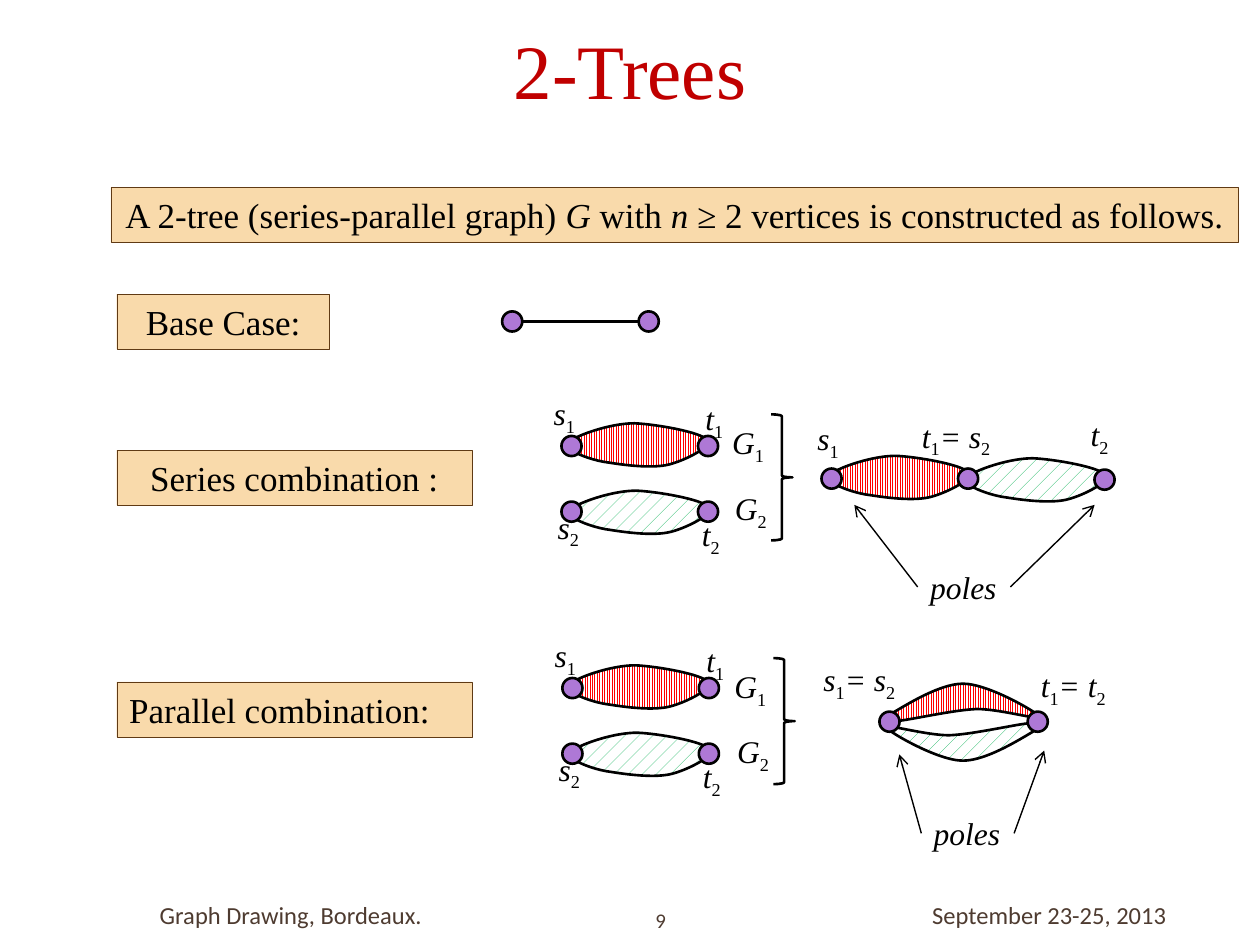
from dataclasses import dataclass
from itertools import groupby

from lxml.etree import SubElement
from pptx import Presentation
from pptx.dml.color import RGBColor
from pptx.enum.dml import MSO_PATTERN as Pattern
from pptx.enum.shapes import MSO_CONNECTOR as Connector, MSO_SHAPE as Shape
from pptx.enum.text import MSO_ANCHOR as Anchor, MSO_AUTO_SIZE as AutoSize, PP_ALIGN as Align
from pptx.oxml.ns import qn
from pptx.util import Pt


@dataclass(frozen=True)
class Theme:
    serif: str = "Times New Roman"
    sans: str = "Calibri"
    title: str = "C00000"
    ink: str = "000000"
    paper: str = "FFFFFF"
    footer: str = "4E3B30"
    box: str = "F9DAAB"
    box_line: str = "603A14"
    node: str = "AE78D6"
    red: str = "FF0000"
    green: str = "00B050"
    title_size: float = 44
    box_size: float = 20
    label_size: float = 18
    footer_size: float = 14
    number_size: float = 11.9
    stroke: float = 1.5
    thin: float = 0.79


THEME = Theme()
RED = (Pattern.LIGHT_VERTICAL, THEME.red)
GREEN = (Pattern.PERCENT_10, THEME.green)
NODE = 11.5
LABEL_HEIGHT = 28.8
SPAN = 78  # distance between the poles of one component
ROW = 37.5  # distance between the two components of a pair

# Outlines: opposite corners, then a start point and cubic segments
LENS = ((-1.5, -13), (77.8, 11.5)), [
    (3, -5), (9, -8), (24, -13), (36, -13), (48, -12.5), (74, -8), (77.5, -3.5),
    (81, 0), (65.5, 8), (56, 10.5), (46.5, 13), (31, 11), (21.5, 9.5),
    (13, 8.5), (4, 5), (1, 3), (-3, 1), (-3, -3), (3, -5)]
CRESCENT = ((-46.8, -22), (44, -0.4)), [
    (-42.5, -4), (-36, -7.5), (-14.5, -22), (0, -22), (14.5, -22), (42.5, -5.5),
    (44, -3), (45.5, -0.5), (21.5, -7.5), (8, -7.5), (-6, -7), (-31, -1),
    (-39, -0.5), (-47.5, 0.5), (-49, -0.5), (-42.5, -4)]


def color(value):
    return RGBColor.from_string(value)


def points(*lengths):
    return [Pt(length) for length in lengths]


def set_line(shape, width=THEME.stroke, line_color=THEME.ink):
    shape.line.width = Pt(width)
    shape.line.color.rgb = color(line_color)


def add_run(paragraph, text, size, font=THEME.serif, ink=THEME.ink, italic=False):
    run = paragraph.add_run()
    run.text = text
    run.font.size, run.font.name, run.font.italic = Pt(size), font, italic
    run.font.color.rgb = color(ink)
    return run


def add_node(shapes, x, y):
    node = shapes.add_shape(Shape.OVAL, *points(x - NODE / 2, y - NODE / 2, NODE, NODE))
    node.shadow.inherit = False
    node.fill.solid()
    node.fill.fore_color.rgb = color(THEME.node)
    set_line(node)


def curve_path(region, curve):
    """Give a freeform a closed path of cubic segments, in slide lengths."""
    path = next(region._element.iter(qn("a:path")))
    for child in list(path):
        path.remove(child)
    for i in range(0, len(curve), 3):
        first = 0 if i == 0 else i - 2
        command = SubElement(path, qn("a:cubicBezTo" if i else "a:moveTo"))
        for x, y in curve[first:i + 1]:
            SubElement(command, qn("a:pt"), x=str(x - region.left), y=str(y - region.top))
    SubElement(path, qn("a:close"))


def add_region(shapes, x, y, outline, hatch, turn=1):
    """Draw a hatched outline about (x, y); turn=-1 rotates it by half a turn."""
    corners, curve = ([points(x + turn * dx, y + turn * dy) for dx, dy in part]
                      for part in outline)
    builder = shapes.build_freeform(*corners[0])
    builder.add_line_segments(corners[1:], close=True)
    region = builder.convert_to_shape()
    curve_path(region, curve)
    region.shadow.inherit = False
    region.fill.patterned()
    region.fill.pattern = hatch[0]
    region.fill.fore_color.rgb = color(hatch[1])
    region.fill.back_color.rgb = color(THEME.paper)
    set_line(region)


def add_label(shapes, x, y, width, text):
    """Italic label whose digits are subscripts."""
    label = shapes.add_textbox(*points(x, y, width, LABEL_HEIGHT))
    label.text_frame.word_wrap = False
    label.text_frame.auto_size = AutoSize.SHAPE_TO_FIT_TEXT
    for is_digit, letters in groupby(text, str.isdigit):
        run = add_run(label.text_frame.paragraphs[0], "".join(letters),
                      THEME.label_size, italic=not is_digit)
        if is_digit:
            run.font._element.set("baseline", "-25000")
    return label


def add_edge(shapes, start, end, width=THEME.stroke, arrow=False):
    edge = shapes.add_connector(Connector.STRAIGHT, *points(*start, *end))
    set_line(edge, width)
    if arrow:
        SubElement(edge.line._get_or_add_ln(), qn("a:tailEnd"), type="arrow")
    SubElement(edge._element.spPr, qn("a:effectLst"))
    return edge


def add_box(shapes, left, top, width, parts, align=Align.CENTER, wrap=True):
    """Tinted text box; parts are (text, italic) pairs."""
    box = shapes.add_shape(Shape.RECTANGLE, *points(left, top, width, 31.5))
    box.shadow.inherit = False
    box.fill.solid()
    box.fill.fore_color.rgb = color(THEME.box)
    set_line(box, 0.25, THEME.box_line)
    frame = box.text_frame
    frame.word_wrap, frame.auto_size = wrap, AutoSize.SHAPE_TO_FIT_TEXT
    frame.vertical_anchor = Anchor.TOP
    frame.paragraphs[0].alignment = align
    for text, italic in parts:
        add_run(frame.paragraphs[0], text, THEME.box_size, italic=italic)


def add_title(slide, left, top, width, height):
    title = slide.shapes.title
    title.left, title.top, title.width, title.height = points(left, top, width, height)
    title.text_frame.vertical_anchor = Anchor.MIDDLE
    paragraph = title.text_frame.paragraphs[0]
    paragraph.alignment = Align.CENTER
    add_run(paragraph, "2-Trees", THEME.title_size, ink=THEME.title)


def add_footer(shapes, left, top, width, height, text, size, align=Align.LEFT):
    footer = shapes.add_textbox(*points(left, top, width, height))
    footer.text_frame.word_wrap = True
    footer.text_frame.vertical_anchor = Anchor.MIDDLE
    paragraph = footer.text_frame.paragraphs[0]
    paragraph.alignment = align
    add_run(paragraph, text, size, THEME.sans, THEME.footer)


def add_base_case(shapes, x, y):
    for node_x in (x, x + SPAN):
        add_node(shapes, node_x, y)
    add_edge(shapes, (x + NODE / 2, y), (x + SPAN - NODE / 2, y))


def add_pair(slide, x, y):
    """Two separate components; (x, y) is the pole s1."""
    shapes = slide.shapes.add_group_shape().shapes
    add_region(shapes, x + 1, y + ROW + 1, LENS, GREEN)
    add_region(shapes, x, y, LENS, RED)
    for row in range(2):
        for column in range(2):
            add_node(shapes, x + column * SPAN, y + row * ROW)
    for dx, dy, width, text in ((-17.3, -33.2, 27.4, "s1"), (69.4, -30.2, 26, "t1"),
                                (-15, 31.6, 27.4, "s2"), (67.4, 36, 26, "t2")):
        add_label(shapes, x + dx, y + dy, width, text)


def add_names_and_brace(shapes, x, y):
    add_label(shapes, x, y, 33.8, "G1")
    add_label(shapes, x + 1.5, y + ROW, 33.8, "G2")
    brace = shapes.add_shape(Shape.RIGHT_BRACE, *points(x + 29.4, y - 1.4, 12.2, 72))
    brace.shadow.inherit = False
    brace.fill.background()
    set_line(brace)


def add_poles(shapes, x, y, left_tip, right_tip):
    label = add_label(shapes, x, y, 53, "poles")
    middle = y + LABEL_HEIGHT / 2
    for start_x, site, tip in ((x, 1, left_tip), (x + 53, 3, right_tip)):
        arrow = add_edge(shapes, (start_x, middle), tip, THEME.thin, arrow=True)
        arrow.begin_connect(label, site)


def add_series_result(shapes, x, y):
    add_region(shapes, x + SPAN + 1, y + 1.4, LENS, GREEN)
    add_region(shapes, x + 0.7, y, LENS, RED)
    for dx, dy in ((0, 0), (SPAN, 0), (2 * SPAN, 0.6)):
        add_node(shapes, x + dx, y + dy)
    add_label(shapes, x - 15.2, y - 37.6, 27.4, "s1")
    add_label(shapes, x + 44.6, y - 39, 55.4, "t1= s2")
    add_label(shapes, x + 141, y - 39.8, 26, "t2")
    add_poles(shapes, x + 49.2, y + 47.5, (x + 13, y + 15), (x + 150.3, y + 15))


def add_parallel_result(shapes, x, y):
    for hatch, turn in ((RED, 1), (GREEN, -1)):
        add_region(shapes, x + 42, y + 0.3, CRESCENT, hatch, turn)
    for node_x in (x, x + 84.7):
        add_node(shapes, node_x, y)
    add_label(shapes, x - 44.8, y - 39, 57.6, "s1= s2")
    add_label(shapes, x + 79.4, y - 35.3, 53.3, "t1= t2")
    add_poles(shapes, x + 18.2, y + 49.4, (x + 5.6, y + 18.7), (x + 88.4, y + 16.5))


def main():
    presentation = Presentation()
    presentation.slide_width, presentation.slide_height = points(720, 540)
    slide = presentation.slides.add_slide(presentation.slide_layouts[5])
    shapes = slide.shapes
    add_title(slide, 0, 0, 720, 78)

    # Statement and case headings
    add_box(shapes, 63.4, 107, 644.2, [
        ("A 2-tree (series-parallel graph) ", False), ("G", True), (" with ", False),
        ("n ≥ ", True), ("2 vertices is constructed as follows.", False)], wrap=False)
    add_box(shapes, 66.7, 168, 121.7, [("Base Case:", False)])
    add_box(shapes, 66.7, 257.2, 203, [("Series combination :", False)])
    add_box(shapes, 66.7, 389.7, 203, [("Parallel combination:", False)], Align.LEFT)

    # Diagrams
    add_base_case(shapes, 292.7, 183.7)
    add_pair(slide, 326.6, 254.9)
    add_names_and_brace(shapes, 411.3, 238.2)
    add_series_result(shapes, 475.2, 273.5)
    add_pair(slide, 327.1, 393.2)
    add_names_and_brace(shapes, 412.6, 377.5)
    add_parallel_result(shapes, 508.3, 412.4)

    # Footer
    add_footer(shapes, 47.4, 508.3, 204, 28.8, "Graph Drawing, Bordeaux. ",
               THEME.footer_size, Align.RIGHT)
    add_footer(shapes, 367.4, 516.2, 41.8, 19.4, "9", THEME.number_size)
    add_footer(shapes, 525.6, 508.3, 164.2, 28.8, "September 23-25, 2013", THEME.footer_size)
    presentation.save("out.pptx")


if __name__ == "__main__":
    main()
